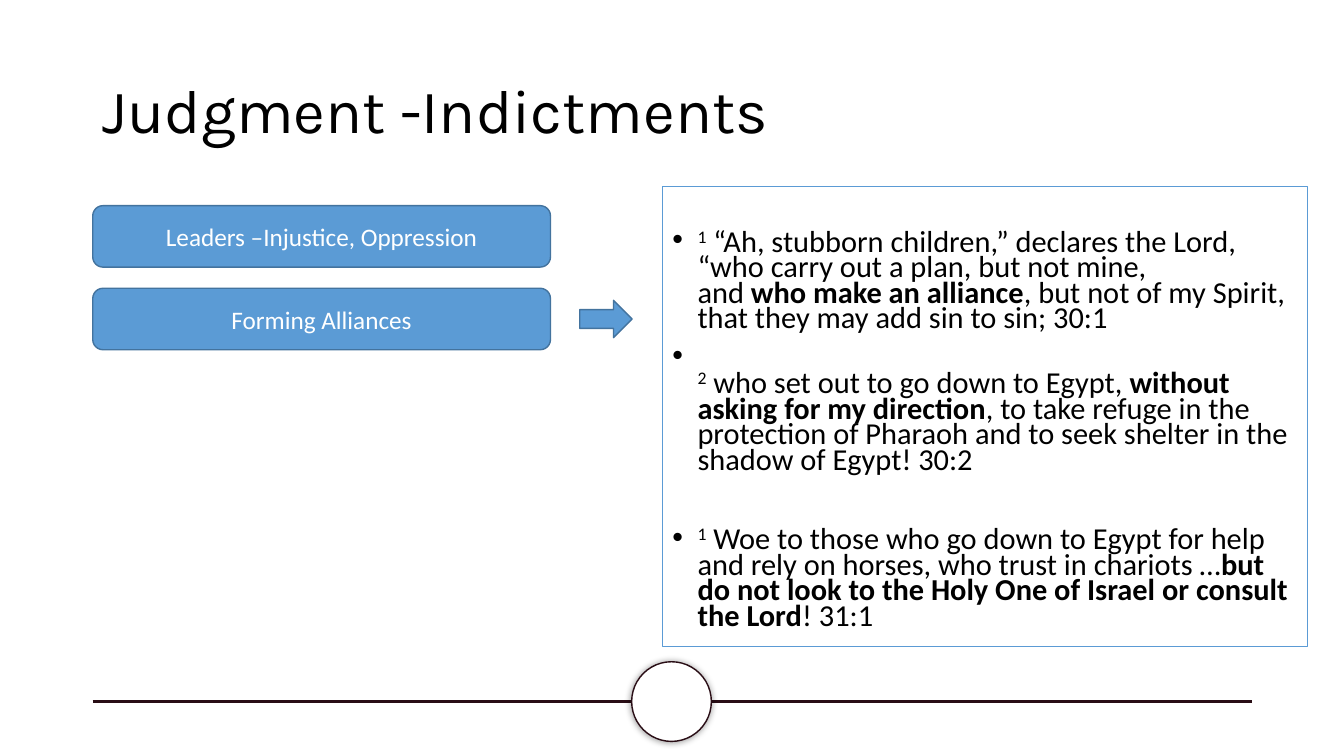
from dataclasses import dataclass

import lxml.etree
import pptx
import pptx.dml.color
import pptx.enum.shapes
import pptx.enum.text
import pptx.oxml
import pptx.oxml.ns
import pptx.util

Inches = pptx.util.Inches
Pt = pptx.util.Pt
Color = pptx.dml.color.RGBColor.from_string
Shape = pptx.enum.shapes.MSO_SHAPE
Align = pptx.enum.text.PP_ALIGN
Anchor = pptx.enum.text.MSO_ANCHOR
qn = pptx.oxml.ns.qn


@dataclass(frozen=True)
class Theme:
    heading_font: str = "Karla"
    body_font: str = "Calibri"
    title_size: float = 44
    label_size: float = 18
    verse_size: float = 21.7
    ink: str = "000000"
    paper: str = "FFFFFF"
    blue: str = "5B9BD5"
    blue_edge: str = "43739E"
    maroon: str = "290D15"


THEME = Theme()
LEFT, WIDTH = 0.92, 11.5
TOPICS = ["Leaders –Injustice, Oppression", "Forming Alliances"]

# Each verse: space before in points, then (text, style) pieces.
VERSES = [
    (0, [("1", "super"),
         (" “Ah, stubborn children,” declares the Lord,\n“who carry out a plan, but not mine,\nand ", ""),
         ("who make an alliance", "bold"),
         (", but not of my Spirit,\nthat they may add sin to sin; 30:1", "")]),
    (10, [("\n", ""), ("2", "super"),
          (" who set out to go down to Egypt, ", ""),
          ("without asking for my direction", "bold"),
          (", to take refuge in the protection of Pharaoh and to seek shelter "
           "in the shadow of Egypt! 30:2", "")]),
    (38.5, [("1", "super"),
            (" Woe to those who go down to Egypt for help and rely on horses, who trust in chariots …", ""),
            ("but do not look to the Holy One of Israel or consult the Lord", "bold"),
            ("! 31:1", "")]),
]


def apply(target, values):
    for name, value in values.items():
        setattr(target, name, value)


def format_font(font, name, size, color, bold=False):
    apply(font, {"name": name, "size": Pt(size), "bold": bold})
    font.color.rgb = Color(color)


def set_line(line, color, width):
    line.color.rgb = Color(color)
    line.width = Pt(width)


def add_filled_shape(slide, kind, box, fill, edge):
    shape = slide.shapes.add_shape(kind, *map(Inches, box))
    shape.shadow.inherit = False
    shape.fill.solid()
    shape.fill.fore_color.rgb = Color(fill)
    set_line(shape.line, edge, 1)
    return shape


def add_footer_ornament(slide, left, center_y, width, diameter):
    rule = slide.shapes.add_connector(
        pptx.enum.shapes.MSO_CONNECTOR.STRAIGHT,
        Inches(left), Inches(center_y), Inches(left + width), Inches(center_y))
    set_line(rule.line, THEME.maroon, 2.25)
    lxml.etree.SubElement(rule._element.spPr, qn("a:effectLst"))

    box = (left + (width - diameter) / 2 - 0.01, center_y - diameter / 2, diameter, diameter)
    circle = add_filled_shape(slide, Shape.OVAL, box, THEME.paper, THEME.maroon)
    effects = circle._element.spPr.find(qn("a:effectLst"))
    effects.append(pptx.oxml.parse_xml(
        f'<a:outerShdw {pptx.oxml.ns.nsdecls("a")} blurRad="{Pt(5)}" dist="0" dir="0" '
        f'algn="ctr" rotWithShape="0"><a:srgbClr val="{THEME.ink}">'
        '<a:alpha val="40000"/></a:srgbClr></a:outerShdw>'))


def add_title(slide, text, left, top, width, height):
    title = slide.shapes.title
    apply(title, {"left": Inches(left), "top": Inches(top),
                  "width": Inches(width), "height": Inches(height)})
    title.text = text
    apply(title.text_frame, {"vertical_anchor": Anchor.MIDDLE, "word_wrap": True,
                             "auto_size": pptx.enum.text.MSO_AUTO_SIZE.NONE})
    paragraph = title.text_frame.paragraphs[0]
    apply(paragraph, {"alignment": Align.LEFT, "line_spacing": 0.9})
    format_font(paragraph.runs[0].font, THEME.heading_font, THEME.title_size, THEME.ink)


def add_topics(slide, topics, left, top, width, height, pitch):
    """Stack the topic buttons and point an arrow from the last one."""
    for index, topic in enumerate(topics):
        box = (left, top + index * pitch, width, height)
        button = add_filled_shape(slide, Shape.ROUNDED_RECTANGLE, box, THEME.blue, THEME.blue_edge)
        button.text_frame.text = topic
        button.text_frame.vertical_anchor = Anchor.MIDDLE
        paragraph = button.text_frame.paragraphs[0]
        paragraph.alignment = Align.CENTER
        format_font(paragraph.runs[0].font, THEME.body_font, THEME.label_size, THEME.paper)
    last_top = top + (len(topics) - 1) * pitch
    add_filled_shape(slide, Shape.RIGHT_ARROW, (left + width + 0.29, last_top + 0.12, 0.52, 0.37),
                     THEME.blue, THEME.blue_edge)


def add_bullet(paragraph):
    properties = paragraph._p.get_or_add_pPr()
    properties.set("marL", str(Inches(0.25)))
    properties.set("indent", str(-Inches(0.25)))
    font = lxml.etree.SubElement(properties, qn("a:buFont"))
    font.set("typeface", "Arial")
    lxml.etree.SubElement(properties, qn("a:buChar")).set("char", "•")


def add_piece(paragraph, text, style):
    for index, line in enumerate(text.split("\n")):
        if index:
            paragraph.add_line_break()
        if line:
            run = paragraph.add_run()
            run.text = line
            format_font(run.font, THEME.body_font, THEME.verse_size, THEME.ink, style == "bold")
            if style == "super":
                run._r.get_or_add_rPr().set("baseline", "30000")
    for line_break in paragraph._p.findall(qn("a:br")):
        if line_break.find(qn("a:rPr")) is None:
            size = str(round(THEME.verse_size * 100))
            lxml.etree.SubElement(line_break, qn("a:rPr")).set("sz", size)


def add_verses(slide, verses, left, top, width, height):
    panel = slide.shapes.add_textbox(*map(Inches, (left, top, width, height)))
    set_line(panel.line, THEME.blue, 0.75)
    frame = panel.text_frame
    apply(frame, {"word_wrap": True, "margin_top": Inches(0.45)})
    for index, (space_before, pieces) in enumerate(verses):
        paragraph = frame.add_paragraph() if index else frame.paragraphs[0]
        add_bullet(paragraph)
        apply(paragraph, {"line_spacing": 0.7, "space_before": Pt(space_before)})
        format_font(paragraph.font, THEME.body_font, THEME.verse_size, THEME.ink)
        for text, style in pieces:
            add_piece(paragraph, text, style)


def main():
    presentation = pptx.Presentation()
    apply(presentation, {"slide_width": Inches(13.33), "slide_height": Inches(7.5)})
    slide = presentation.slides.add_slide(presentation.slide_layouts.get_by_name("Title Only"))
    add_footer_ornament(slide, LEFT, 6.96, WIDTH, 0.79)
    add_title(slide, "Judgment -Indictments", LEFT, 0.4, WIDTH, 1.45)
    add_verses(slide, VERSES, 6.57, 1.85, 6.4, 4.56)
    add_topics(slide, TOPICS, LEFT, 2.04, 4.54, 0.61, 0.82)
    presentation.save("out.pptx")


if __name__ == "__main__":
    main()
